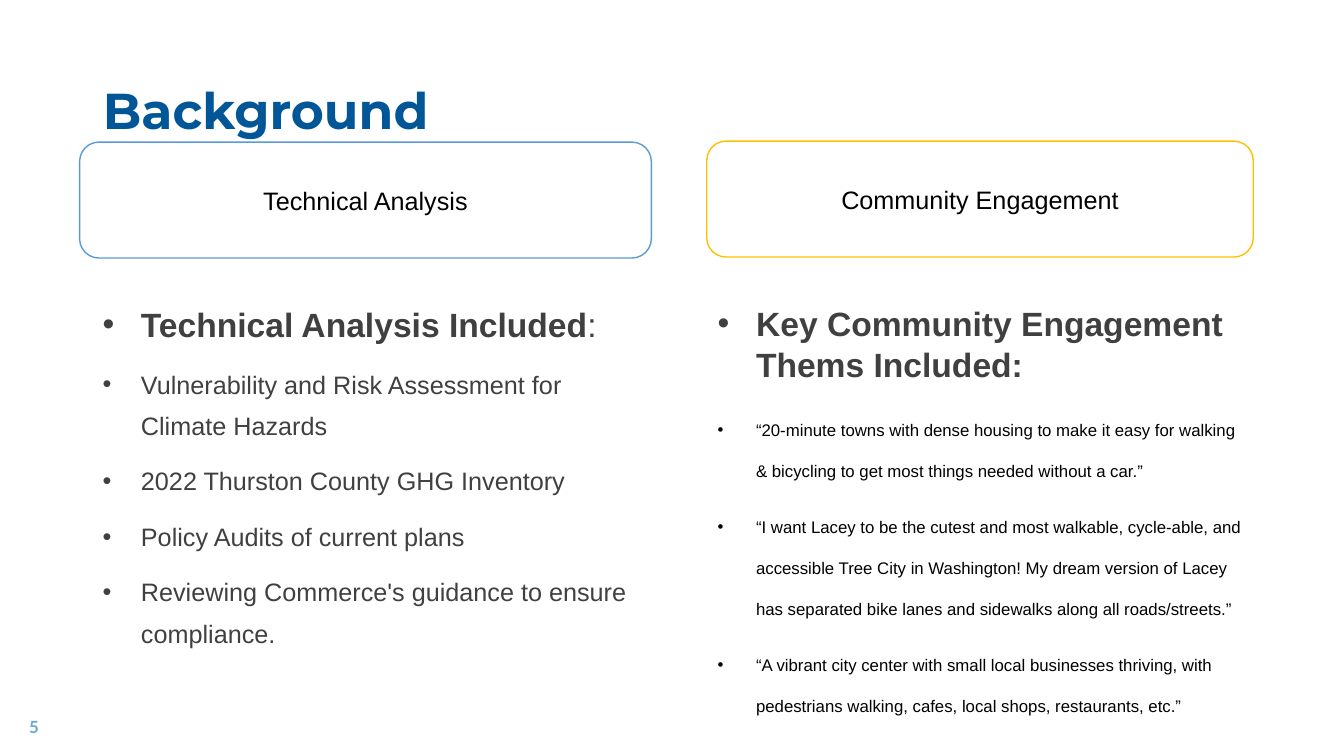
from dataclasses import dataclass
from lxml.etree import SubElement
from pptx import Presentation
from pptx.dml.color import RGBColor as Rgb
from pptx.enum.shapes import MSO_SHAPE as Kind
from pptx.enum.text import MSO_ANCHOR as Anchor, MSO_AUTO_SIZE as Fit, PP_ALIGN as Align
from pptx.oxml.ns import qn
from pptx.util import Pt

SCALE = 9144


@dataclass(frozen=True)
class Theme:
    blue: str = "005696"
    pale: str = "66AAD3"
    sky: str = "5B9BD5"
    gold: str = "FFC000"
    gray: str = "404040"
    black: str = "000000"
    white: str = "FFFFFF"
    title: int = 36
    head: int = 24
    text: int = 18
    small: int = 12
    lead: float = 29.6
    gap: int = 10


THEME = Theme()


def px(*nums):
    return [num * SCALE for num in nums]


def style(part, face, size, color, bold=False):
    font = part.font
    font.name, font.size, font.bold = face, Pt(size), bold
    font.color.rgb = Rgb.from_string(color)


def frame(shape, anchor):
    area = shape.text_frame
    area.word_wrap = True
    area.auto_size = Fit.NONE
    area.vertical_anchor = anchor
    return area


def title(slide, box, text):
    shape = slide.shapes.title
    shape.left, shape.top, shape.width, shape.height = px(*box)
    para = frame(shape, Anchor.MIDDLE).paragraphs[0]
    para.text = text
    para.alignment = Align.LEFT
    para.line_spacing = 0.9
    style(para, "Montserrat", THEME.title, THEME.blue, True)


def card(slide, box, text, edge):
    shape = slide.shapes.add_shape(Kind.ROUNDED_RECTANGLE, *px(*box))
    shape.shadow.inherit = False
    shape.fill.solid()
    shape.fill.fore_color.rgb = Rgb.from_string(THEME.white)
    shape.line.color.rgb = Rgb.from_string(edge)
    shape.line.width = Pt(1)
    para = frame(shape, Anchor.MIDDLE).paragraphs[0]
    para.text = text
    para.alignment = Align.CENTER
    style(para, "Arial", THEME.text, THEME.black)


def bullet(para):
    props = para._p.get_or_add_pPr()
    dent, = px(38)
    props.set("marL", str(dent))
    props.set("indent", str(-dent))
    para.line_spacing = Pt(THEME.lead)
    SubElement(props, qn("a:buFont")).set("typeface", "Arial")
    SubElement(props, qn("a:buChar")).set("char", "•")


def points(slide, box, head, items, size, color):
    area = frame(slide.shapes.add_textbox(*px(*box)), Anchor.TOP)
    top = area.paragraphs[0]
    bullet(top)
    style(top, "Arial", THEME.head, THEME.gray, True)
    for text, bold in head:
        run = top.add_run()
        run.text = text
        style(run, "Arial", THEME.head, THEME.gray, bold)
    for item in items:
        para = area.add_paragraph()
        para.text = item
        para.space_before = Pt(THEME.gap)
        bullet(para)
        style(para, "Arial", size, color)


def column(slide, box, pad, label, edge, head, items, size, color):
    left, top, width, height = box
    card(slide, (left, top, width, 115), label, edge)
    inner = left + pad, top + 154, width - pad, height - 154
    points(slide, inner, head, items, size, color)


def number(slide, box, text):
    para = frame(slide.shapes.add_textbox(*px(*box)), Anchor.MIDDLE).paragraphs[0]
    para.text = text
    style(para, "Lato", THEME.small, THEME.pale, True)


def main():
    deck = Presentation()
    deck.slide_width, deck.slide_height = px(1333, 750)
    slide = deck.slides.add_slide(deck.slide_layouts[5])
    title(slide, (92, 40, 1150, 145), "Background")
    column(
        slide, (79, 141, 567, 571), 13, "Technical Analysis", THEME.sky,
        [("Technical Analysis Included", True), (":", False)],
        [
            "Vulnerability and Risk Assessment for Climate Hazards",
            "2022 Thurston County GHG Inventory",
            "Policy Audits of current plans",
            "Reviewing Commerce's guidance to ensure compliance.",
        ],
        THEME.text, THEME.gray,
    )
    column(
        slide, (701, 140, 542, 571), 1, "Community Engagement", THEME.gold,
        [("Key Community Engagement Thems Included:", True)],
        [
            "“20-minute towns with dense housing to make it easy for walking "
            "& bicycling to get most things needed without a car.”",
            "“I want Lacey to be the cutest and most walkable, cycle-able, and "
            "accessible Tree City in Washington! My dream version of Lacey "
            "has separated bike lanes and sidewalks along all roads/streets.”",
            "“A vibrant city center with small local businesses thriving, with "
            "pedestrians walking, cafes, local shops, restaurants, etc.”",
        ],
        THEME.small, THEME.black,
    )
    number(slide, (19, 701, 300, 40), "5")
    deck.save("out.pptx")


if __name__ == "__main__":
    main()
